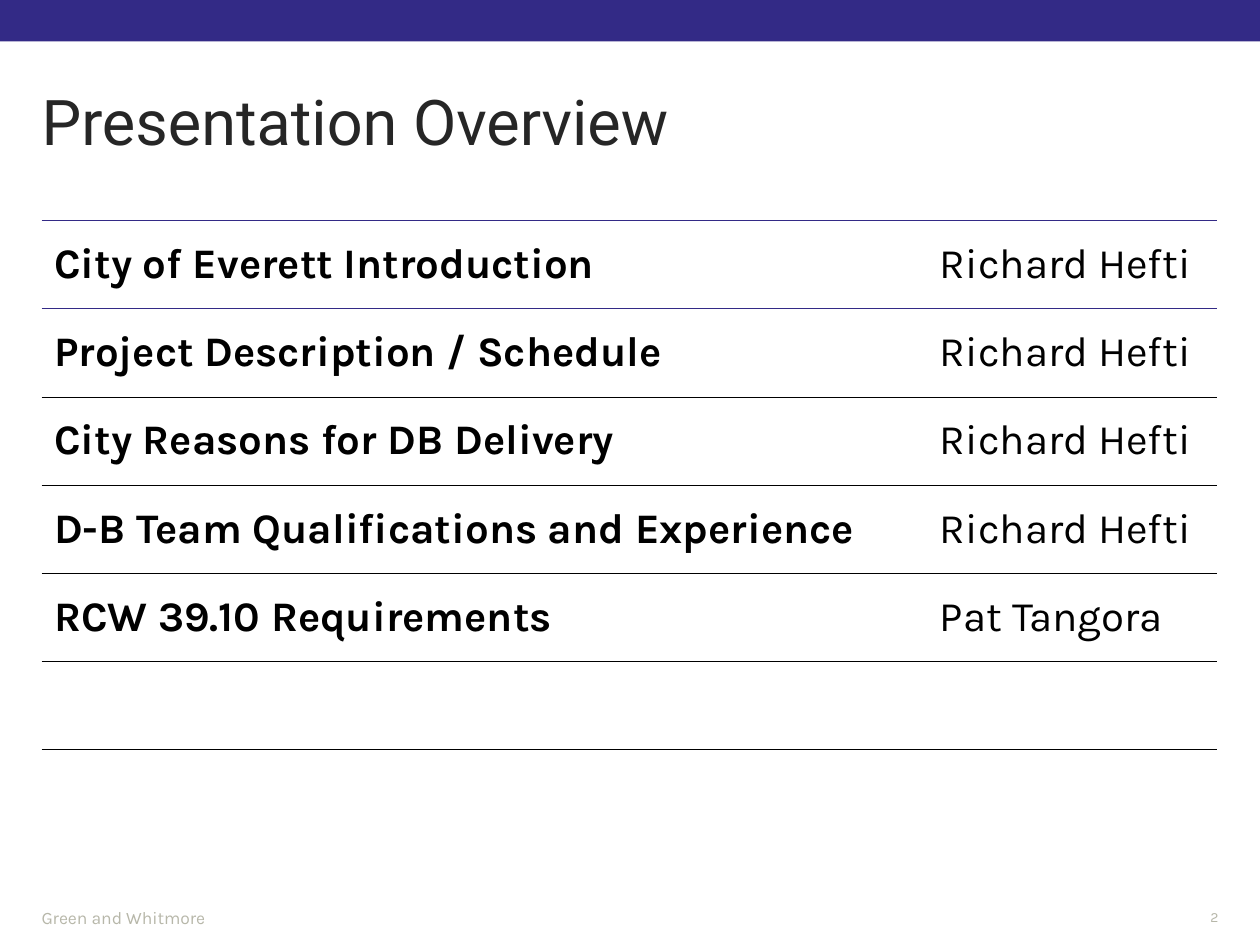
"""Build the presentation overview slide with its agenda table."""
from typing import NamedTuple

from lxml import etree
from pptx import Presentation
from pptx.dml.color import RGBColor
from pptx.enum import shapes, text
from pptx.oxml import ns
from pptx.util import Inches, Pt

PURPLE = RGBColor(0x33, 0x2A, 0x86)
DARK = RGBColor(0x26, 0x26, 0x26)
BLACK = RGBColor(0, 0, 0)
GREY = RGBColor(0xB7, 0xB7, 0xA9)
LEFT, WIDTH, ROW = 0.33, 9.33, 0.7
COLS = (7.03, 2.3)


class Item(NamedTuple):
    topic: str
    name: str


class Note(NamedTuple):
    words: str
    box: tuple[float, float, float, float]
    size: int
    align: text.PP_ALIGN


ITEMS = (
    Item("City of Everett Introduction", "Richard Hefti"),
    Item("Project Description / Schedule", "Richard Hefti"),
    Item("City Reasons for DB Delivery", "Richard Hefti"),
    Item("D-B Team Qualifications and Experience", "Richard Hefti"),
    Item("RCW 39.10 Requirements", "Pat Tangora"),
    Item("", ""),
)
NOTES = (
    Note("Green and Whitmore", (LEFT, 7.17, 8.83, 0.23), 10, text.PP_ALIGN.LEFT),
    Note("2", (9.25, 7.15, 0.42, 0.25), 8, text.PP_ALIGN.RIGHT),
)


def style(para, face: str, size: int, color: RGBColor, bold: bool = False) -> None:
    font = para.font
    font.name, font.size, font.bold = face, Pt(size), bold
    font.color.rgb = color


def edge(cell, side: str, color: RGBColor | None = None) -> None:
    props = cell._tc.get_or_add_tcPr()
    line = etree.SubElement(props, ns.qn(f"a:ln{side}"), w=str(Pt(0.5)))
    if color is None:
        etree.SubElement(line, ns.qn("a:noFill"))
    else:
        fill = etree.SubElement(line, ns.qn("a:solidFill"))
        etree.SubElement(fill, ns.qn("a:srgbClr"), val=str(color))


def add_bar(slide) -> None:
    bar = slide.shapes.add_shape(
        shapes.MSO_SHAPE.RECTANGLE, 0, 0, Inches(10), Inches(LEFT))
    bar.shadow.inherit = False
    bar.fill.solid()
    bar.fill.fore_color.rgb = PURPLE
    bar.line.fill.background()


def set_title(slide, words: str) -> None:
    title = slide.shapes.title
    title.left, title.top = Inches(LEFT), Inches(0.5)
    title.width, title.height = Inches(WIDTH), Inches(1)
    frame = title.text_frame
    frame.text = words
    frame.margin_left = 0
    frame.vertical_anchor = text.MSO_ANCHOR.MIDDLE
    para = frame.paragraphs[0]
    para.alignment = text.PP_ALIGN.LEFT
    para.line_spacing = 0.85
    style(para, "Roboto", 36, DARK)


def add_note(slide, note: Note) -> None:
    frame = slide.shapes.add_textbox(*map(Inches, note.box)).text_frame
    frame.word_wrap = True
    frame.margin_left = frame.margin_right = 0
    frame.vertical_anchor = text.MSO_ANCHOR.MIDDLE
    para = frame.paragraphs[0]
    para.text, para.alignment = note.words, note.align
    style(para, "Karla", note.size, GREY)


def add_agenda(slide, items: tuple[Item, ...]) -> None:
    table = slide.shapes.add_table(
        len(items), len(COLS), Inches(LEFT), Inches(1.75),
        Inches(WIDTH), Inches(ROW * len(items))).table
    table.first_row = table.horz_banding = False
    for col, width in zip(table.columns, COLS):
        col.width = Inches(width)
    for i, item in enumerate(items):
        table.rows[i].height = Inches(ROW)
        for j, words in enumerate(item):
            cell = table.cell(i, j)
            cell.vertical_anchor = text.MSO_ANCHOR.MIDDLE
            edge(cell, "L")
            edge(cell, "R")
            edge(cell, "T", PURPLE if i < 2 else BLACK)
            edge(cell, "B", PURPLE if i == 0 else BLACK)
            cell.fill.background()
            para = cell.text_frame.paragraphs[0]
            para.text = words
            style(para, "Karla", 24, BLACK, j == 0)


def main() -> None:
    deck = Presentation()
    deck.slide_width, deck.slide_height = Inches(10), Inches(7.5)
    slide = deck.slides.add_slide(deck.slide_layouts[5])
    add_bar(slide)
    set_title(slide, "Presentation Overview")
    for note in NOTES:
        add_note(slide, note)
    add_agenda(slide, ITEMS)
    deck.save("out.pptx")


if __name__ == "__main__":
    main()
